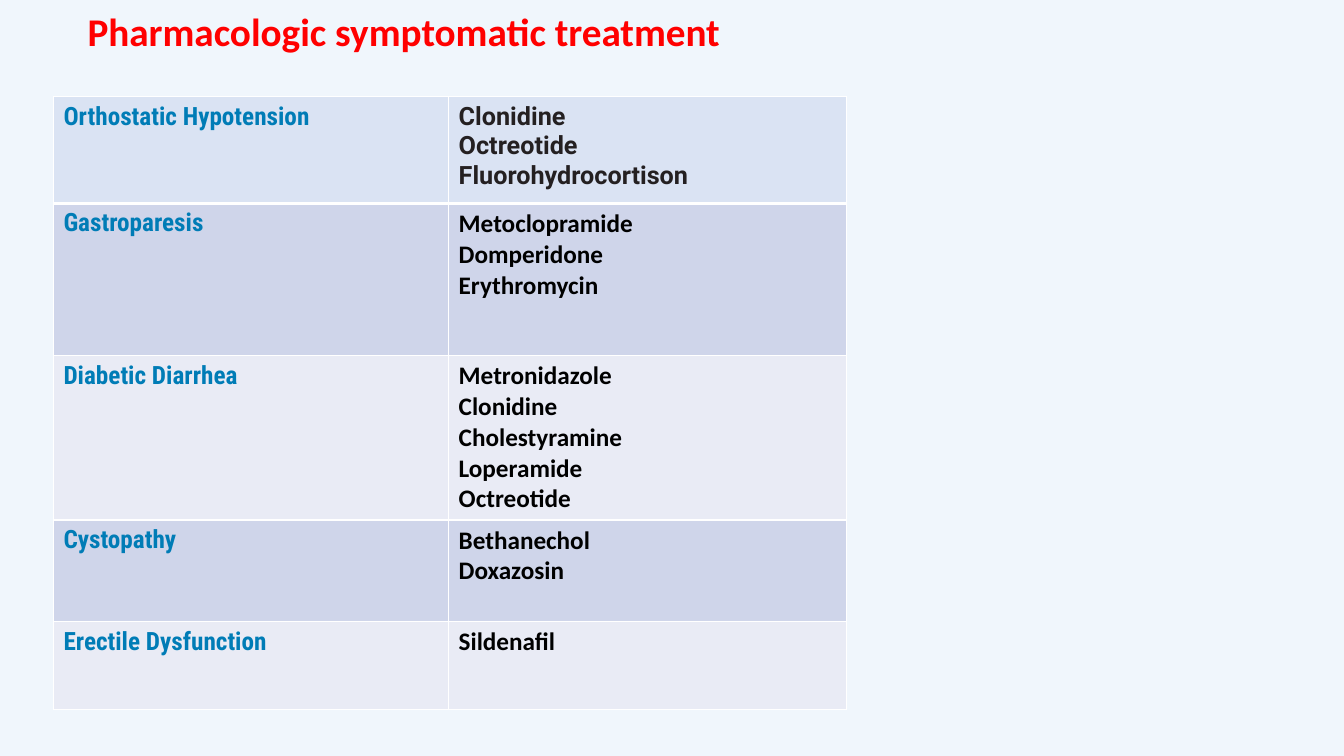
from lxml.etree import SubElement
from pptx import Presentation
from pptx.dml.color import RGBColor as RGB
from pptx.enum.text import MSO_ANCHOR as Anchor
from pptx.oxml.ns import qn
from pptx.util import Inches, Pt

BACKGROUND = RGB(0xF0, 0xF6, 0xFC)
RED = RGB(0xFF, 0x00, 0x00)
BLUE = RGB(0x00, 0x7C, 0xB6)
CHARCOAL = RGB(0x24, 0x20, 0x21)
BLACK = RGB(0x00, 0x00, 0x00)
WHITE = RGB(0xFF, 0xFF, 0xFF)
HEADER_FILL = RGB(0xDA, 0xE3, 0xF3)
DARK_BAND = RGB(0xCF, 0xD5, 0xEA)
LIGHT_BAND = RGB(0xE9, 0xEB, 0xF5)

COLUMN_WIDTHS = [3.92, 3.95]
TREATMENTS = [
    ("Orthostatic Hypotension", ["Clonidine", "Octreotide", "Fluorohydrocortison"], 1.06),
    ("Gastroparesis", ["Metoclopramide", "Domperidone", "Erythromycin"], 1.51),
    ("Diabetic Diarrhea",
     ["Metronidazole", "Clonidine", "Cholestyramine", "Loperamide", "Octreotide"], 1.63),
    ("Cystopathy", ["Bethanechol", "Doxazosin"], 1.01),
    ("Erectile Dysfunction", ["Sildenafil"], 0.87),
]


def write_text(tf, lines, size=18, font="Calibri", color=BLACK, bold=True, spacing=None):
    """Write each line as a formatted paragraph of the text frame."""
    for i, line in enumerate(lines):
        p = tf.add_paragraph() if i else tf.paragraphs[0]
        p.line_spacing = spacing
        r = p.add_run()
        r.text = line
        r.font.size = Pt(size)
        r.font.name = font
        r.font.bold = bold
        r.font.color.rgb = color


def format_cell(cell, fill, top=1, bottom=1):
    """Give a table cell white borders and a solid fill."""
    tcPr = cell._tc.get_or_add_tcPr()
    for side, width in (("L", 1), ("R", 1), ("T", top), ("B", bottom)):
        ln = SubElement(tcPr, qn(f"a:ln{side}"), w=str(Pt(width)))
        solid = SubElement(ln, qn("a:solidFill"))
        SubElement(solid, qn("a:srgbClr"), val=str(WHITE))
    cell.fill.solid()
    cell.fill.fore_color.rgb = fill


def add_title(slide, x, y, w, h):
    """Place the slide title in the given box."""
    tf = slide.shapes.add_textbox(Inches(x), Inches(y), Inches(w), Inches(h)).text_frame
    tf.word_wrap = True
    tf.vertical_anchor = Anchor.MIDDLE
    write_text(tf, ["Pharmacologic symptomatic treatment"], size=28, color=RED, spacing=0.9)


def add_treatments(slide, x, y, w, h):
    """Place the table of conditions and drugs in the given box."""
    table = slide.shapes.add_table(len(TREATMENTS), len(COLUMN_WIDTHS), Inches(x),
                                   Inches(y), Inches(w), Inches(h)).table
    for column, width in zip(table.columns, COLUMN_WIDTHS):
        column.width = Inches(width)
    for i, (condition, drugs, height) in enumerate(TREATMENTS):
        table.rows[i].height = Inches(height)
        fill = HEADER_FILL if i == 0 else DARK_BAND if i % 2 else LIGHT_BAND
        name, drug_list = table.cell(i, 0), table.cell(i, 1)
        for cell in (name, drug_list):
            format_cell(cell, fill, top=3 if i == 1 else 1, bottom=3 if i == 0 else 1)
        write_text(name.text_frame, [condition], font="Roboto Condensed", color=BLUE)
        write_text(drug_list.text_frame, drugs, font="Calibri" if i else "Roboto",
                   color=BLACK if i else CHARCOAL)


def main():
    """Build the slide and save it."""
    prs = Presentation()
    prs.slide_width, prs.slide_height = Inches(13.33), Inches(7.5)
    slide = prs.slides.add_slide(prs.slide_layouts[6])
    slide.background.fill.solid()
    slide.background.fill.fore_color.rgb = BACKGROUND
    add_title(slide, 0.77, 0.07, 11.5, 0.53)
    add_treatments(slide, 0.53, 0.96, sum(COLUMN_WIDTHS), sum(t[2] for t in TREATMENTS))
    prs.save("out.pptx")


if __name__ == "__main__":
    main()
